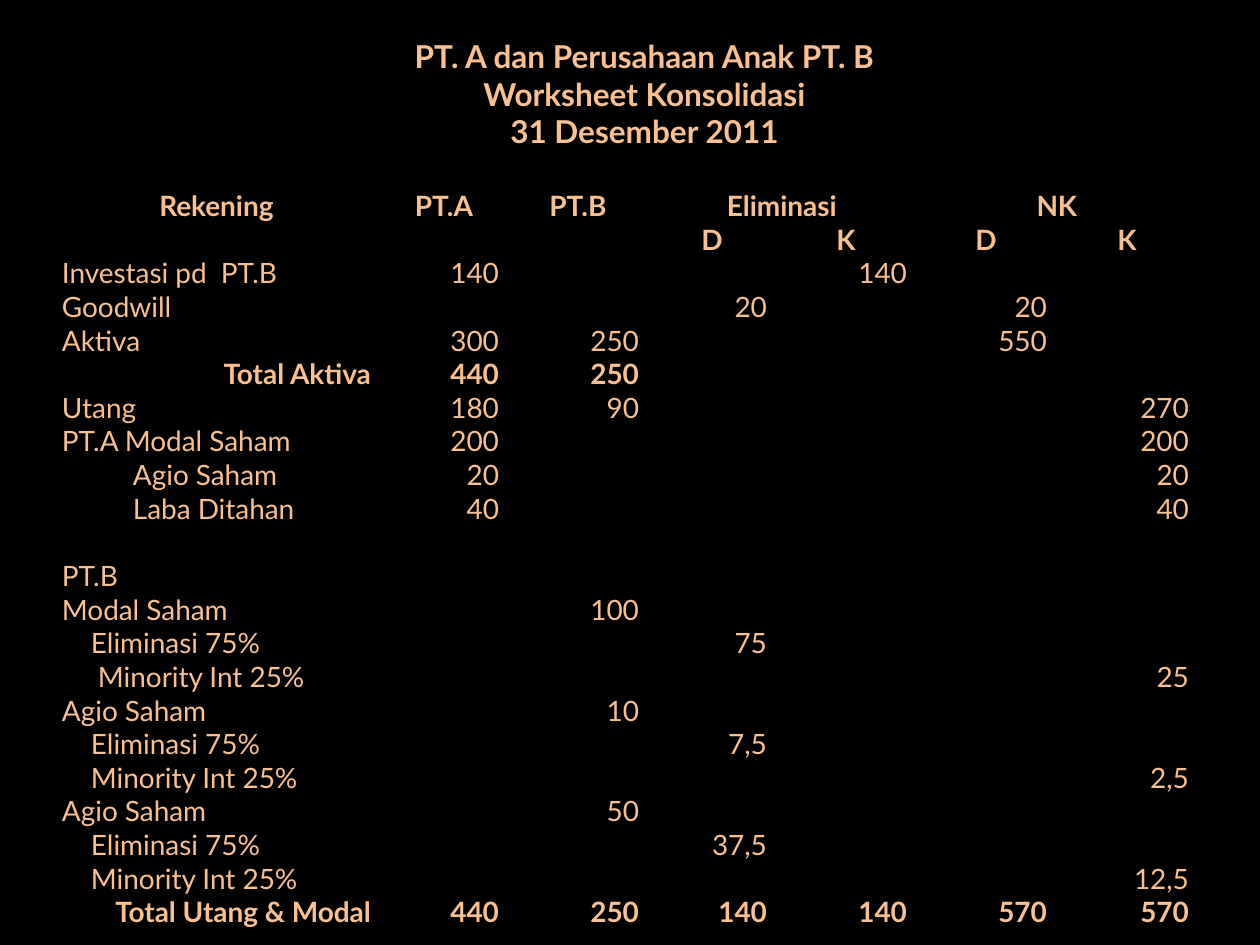
import dataclasses

import pptx
import pptx.dml.color
import pptx.enum.shapes
import pptx.enum.text
import pptx.oxml
import pptx.oxml.ns
import pptx.text.text
import pptx.util

PX_PER_INCH = 126
COLORS = {"black": "000000", "peach": "FAC090"}
ALIGN = pptx.enum.text.PP_ALIGN
FONT = "Lato"
CELL_INSET = 9
COLUMNS = [327, 128, 140, 128, 140, 140, 142]


@dataclasses.dataclass
class Row:
    account: str
    values: dict[int, str] = dataclasses.field(default_factory=dict)
    indent: int = 0
    total: bool = False


HEADERS = [
    ["Rekening", "PT.A", "PT.B", "Eliminasi", "", "NK", ""],
    ["", "", "", "D", "K", "D", "K"],
]

# Amounts are keyed by column number
ROWS = [
    Row("Investasi pd  PT.B", {1: "140", 4: "140"}),
    Row("Goodwill", {3: "20", 5: "20"}),
    Row("Aktiva", {1: "300", 2: "250", 5: "550"}),
    Row("Total Aktiva", {1: "440", 2: "250"}, total=True),
    Row("Utang", {1: "180", 2: "90", 6: "270"}),
    Row("PT.A Modal Saham", {1: "200", 6: "200"}),
    Row("Agio Saham", {1: "20", 6: "20"}, 71),
    Row("Laba Ditahan", {1: "40", 6: "40"}, 71),
    Row(""),
    Row("PT.B"),
    Row("Modal Saham", {2: "100"}),
    Row("Eliminasi 75%", {3: "75"}, 29),
    Row("Minority Int 25%", {6: "25"}, 36),
    Row("Agio Saham", {2: "10"}),
    Row("Eliminasi 75%", {3: "7,5"}, 29),
    Row("Minority Int 25%", {6: "2,5"}, 29),
    Row("Agio Saham", {2: "50"}),
    Row("Eliminasi 75%", {3: "37,5"}, 29),
    Row("Minority Int 25%", {6: "12,5"}, 29),
    Row("Total Utang & Modal",
        {1: "440", 2: "250", 3: "140", 4: "140", 5: "570", 6: "570"}, total=True),
]


def px(n: int) -> pptx.util.Emu:
    return pptx.util.Emu(round(n * 914400 / PX_PER_INCH))


def rgb(name: str) -> pptx.dml.color.RGBColor:
    return pptx.dml.color.RGBColor.from_string(COLORS[name])


def set_attrs(target: object, values: dict) -> None:
    for name, value in values.items():
        setattr(target, name, value)


def style_font(font: pptx.text.text.Font, size: int, bold: bool) -> None:
    set_attrs(font, {"name": FONT, "size": pptx.util.Pt(size), "bold": bold})
    font.fill.solid()
    font.fill.fore_color.rgb = rgb("peach")


def write(p, text: str, size: int, bold: bool, align: ALIGN) -> None:
    p.alignment = align
    if text:
        r = p.add_run()
        r.text = text
        style_font(r.font, size, bold)
    else:  # an empty cell keeps the line height of the others
        style_font(pptx.text.text.Font(p._p.get_or_add_endParaRPr()), size, bold)


def draw_borders(cell) -> None:
    for side in ("lnL", "lnR", "lnT", "lnB"):
        cell._tc.get_or_add_tcPr().append(pptx.oxml.parse_xml(
            f'<a:{side} {pptx.oxml.ns.nsdecls("a")} w="12700"><a:solidFill>'
            f'<a:srgbClr val="{COLORS["black"]}"/></a:solidFill></a:{side}>'))


def fill_cell(cell, text: str, bold: bool, align: ALIGN, indent: int = 0) -> None:
    set_attrs(cell, {"margin_left": px(CELL_INSET + indent),
                     "margin_right": px(CELL_INSET),
                     "margin_top": 0, "margin_bottom": 0})
    draw_borders(cell)
    cell.fill.background()
    write(cell.text_frame.paragraphs[0], text, 16, bold, align)


def draw_backdrop(s) -> None:
    sp = s.shapes.add_shape(pptx.enum.shapes.MSO_SHAPE.RECTANGLE,
                            0, 0, px(1260), px(976))
    sp.shadow.inherit = False
    sp.fill.solid()
    sp.fill.fore_color.rgb = rgb("black")
    sp.line.color.rgb = rgb("black")
    sp.line.width = pptx.util.Pt(2)


def draw_title(s, lines: list[str]) -> None:
    tf = s.shapes.add_textbox(px(368), px(30), px(553), px(127)).text_frame
    set_attrs(tf, {"word_wrap": False,
                   "vertical_anchor": pptx.enum.text.MSO_ANCHOR.MIDDLE,
                   "auto_size": pptx.enum.text.MSO_AUTO_SIZE.SHAPE_TO_FIT_TEXT})
    for i, line in enumerate(lines):
        p = tf.add_paragraph() if i else tf.paragraphs[0]
        write(p, line, 18, True, ALIGN.CENTER)


def draw_worksheet(s) -> None:
    table = s.shapes.add_table(len(HEADERS) + len(ROWS), len(COLUMNS), px(53),
                               px(189), px(sum(COLUMNS)), px(739)).table
    set_attrs(table, {"first_row": False, "horz_banding": False})
    for column, width in zip(table.columns, COLUMNS):
        column.width = px(width)

    # Headers
    for i, labels in enumerate(HEADERS):
        for j, label in enumerate(labels):
            fill_cell(table.cell(i, j), label, True, ALIGN.CENTER)
    for j in (3, 5):
        table.cell(0, j).merge(table.cell(0, j + 1))

    # Accounts and amounts
    for i, row in enumerate(ROWS, len(HEADERS)):
        align = ALIGN.RIGHT if row.total else ALIGN.LEFT
        fill_cell(table.cell(i, 0), row.account, row.total, align, row.indent)
        for j in range(1, len(COLUMNS)):
            fill_cell(table.cell(i, j), row.values.get(j, ""), row.total, ALIGN.RIGHT)


def main() -> None:
    prs = pptx.Presentation()
    set_attrs(prs, {"slide_width": px(1260), "slide_height": px(945)})
    s = prs.slides.add_slide(prs.slide_layouts[6])
    draw_backdrop(s)
    draw_title(s, ["PT. A dan Perusahaan Anak PT. B", "Worksheet Konsolidasi",
                   "31 Desember 2011"])
    draw_worksheet(s)
    prs.save("out.pptx")


if __name__ == "__main__":
    main()
